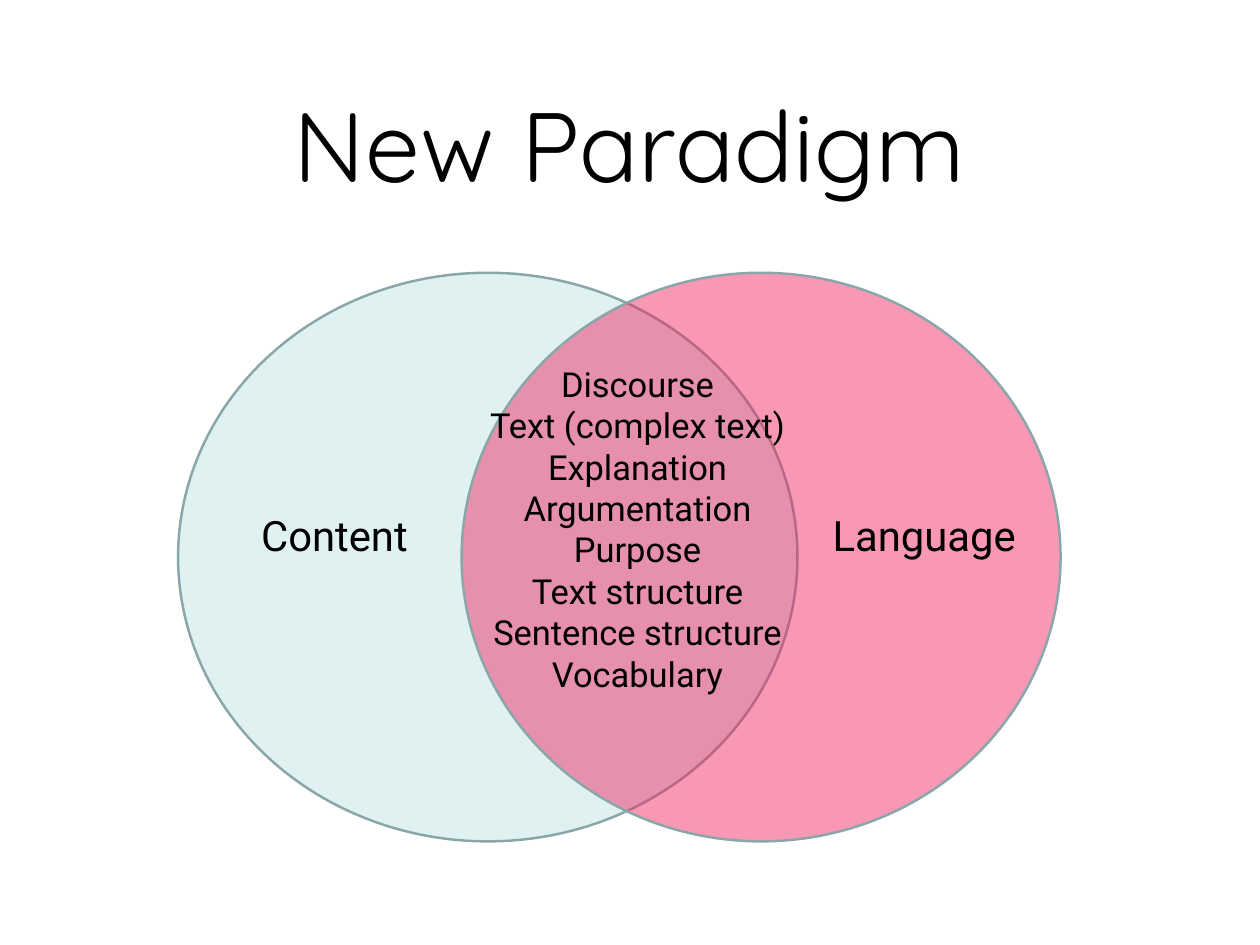
import pptx
import pptx.dml.color
import pptx.enum.shapes
import pptx.enum.text
import pptx.oxml.ns
import pptx.util
from lxml import etree
from pptx.util import Inches

BLACK = pptx.dml.color.RGBColor(0x00, 0x00, 0x00)
PALE_TEAL = pptx.dml.color.RGBColor(0xBB, 0xE0, 0xE3)
PINK = pptx.dml.color.RGBColor(0xF1, 0x1B, 0x5D)
OUTLINE = pptx.dml.color.RGBColor(0x8A, 0xA6, 0xA8)

SHARED_TOPICS = [
    "Discourse",
    "Text (complex text)",
    "Explanation",
    "Argumentation",
    "Purpose",
    "Text structure",
    "Sentence structure",
    "Vocabulary",
]


def add_text(slide, lines, left, top, width, height, size, font="Roboto",
             anchor=pptx.enum.text.MSO_ANCHOR.TOP, side_inset=0.14, edge_inset=0.07,
             wrap=True):
    """Add a centred text box with one paragraph per line."""
    box = slide.shapes.add_textbox(Inches(left), Inches(top), Inches(width), Inches(height))
    frame = box.text_frame
    frame.word_wrap = wrap
    frame.vertical_anchor = anchor
    frame.margin_left = frame.margin_right = Inches(side_inset)
    frame.margin_top = frame.margin_bottom = Inches(edge_inset)
    frame.text = "\n".join(lines)
    for paragraph in frame.paragraphs:
        paragraph.alignment = pptx.enum.text.PP_ALIGN.CENTER
        for run in paragraph.runs:
            run.font.name = font
            run.font.size = pptx.util.Pt(size)
            run.font.color.rgb = BLACK


def add_venn_circle(slide, left, width, color, opacity=45):
    """Add a see-through ellipse; opacity is in percent."""
    circle = slide.shapes.add_shape(pptx.enum.shapes.MSO_SHAPE.OVAL, Inches(left),
                                    Inches(3.08), Inches(width), Inches(6.42))
    circle.shadow.inherit = False
    circle.fill.solid()
    circle.fill.fore_color.rgb = color
    circle.line.color.rgb = OUTLINE
    circle.line.width = pptx.util.Pt(2)
    qualified = pptx.oxml.ns.qn
    fill_color = circle.element.spPr.find(qualified("a:solidFill")).find(qualified("a:srgbClr"))
    etree.SubElement(fill_color, qualified("a:alpha"), val=str(opacity * 1000))


def main():
    presentation = pptx.Presentation()
    presentation.slide_width = Inches(14.22)
    presentation.slide_height = Inches(10.67)
    slide = presentation.slides.add_slide(presentation.slide_layouts[6])

    # Title
    add_text(slide, ["New Paradigm"], 1.39, 0.28, 11.44, 2.67, size=80, font="Quicksand",
             anchor=pptx.enum.text.MSO_ANCHOR.MIDDLE, side_inset=0.06, edge_inset=0.06)

    # Overlapping circles
    add_venn_circle(slide, 2.01, 6.99, PALE_TEAL)
    add_venn_circle(slide, 5.21, 6.76, PINK)

    # Labels
    add_text(slide, SHARED_TOPICS, 4.86, 4.03, 4.67, 3.92, size=28)
    add_text(slide, ["Language"], 9.23, 5.69, 2.4, 0.72, size=34, wrap=False)
    add_text(slide, ["Content"], 2.69, 5.69, 2.17, 0.72, size=34)

    presentation.save("out.pptx")


if __name__ == "__main__":
    main()
